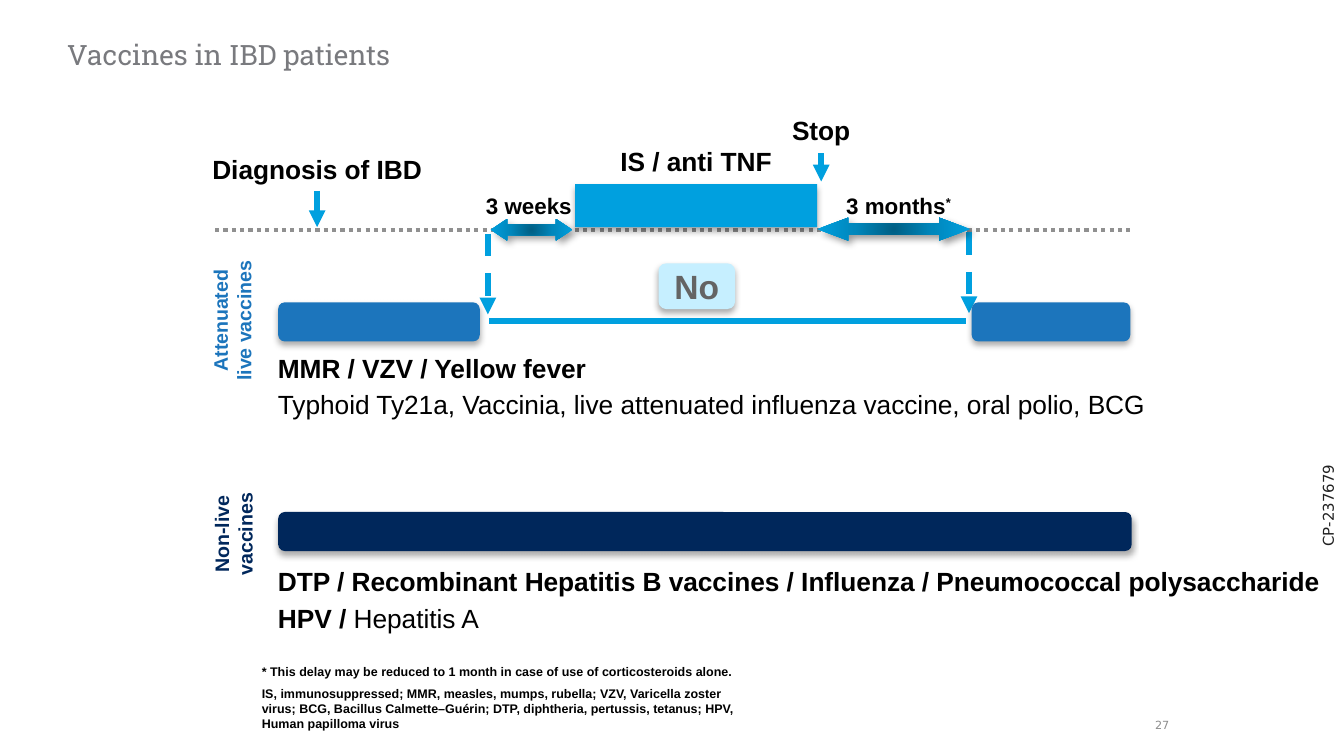
from lxml.etree import SubElement
from pptx import Presentation
from pptx.dml.color import RGBColor
from pptx.enum.dml import MSO_LINE_DASH_STYLE as Dash
from pptx.enum.shapes import MSO_CONNECTOR, MSO_SHAPE as Shape
from pptx.enum.text import MSO_ANCHOR as Anchor, MSO_AUTO_SIZE as AutoSize, PP_ALIGN as Align
from pptx.oxml.ns import qn
from pptx.util import Inches, Pt

COLORS = {
    "black": "000000", "axis": "909090", "cyan": "00A0DF", "mid": "0087BC",
    "deep": "005F84", "blue": "1C75BC", "navy": "00275B", "pale": "C6EFFF",
    "no": "646464", "title": "797A7E", "number": "8D8D8D", "code": "212121",
}
SOFT = {"blurRad": 3.5, "dist": 2.2, "angle": 90, "alpha": 32}
STRONG = {"blurRad": 4, "dist": 3, "angle": 45, "alpha": 40}


def rgb(name):
    """Return the named colour."""
    return RGBColor.from_string(COLORS[name])


def add_runs(p, runs, size, color, font):
    """Add (text, format) runs to a paragraph, splitting lines at breaks."""
    for text, extra in runs:
        for i, line in enumerate(text.split("\n")):
            if i:
                p.add_line_break()
            r = p.add_run()
            r.text = line
            values = {"size": Pt(size), "name": font, "bold": extra.get("bold", True)}
            for key, value in values.items():
                setattr(r.font, key, value)
            r.font.color.rgb = rgb(color)
            if extra.get("superscript"):
                r._r.get_or_add_rPr().set("baseline", "30000")


def fill_text(tf, paragraphs, size, color="black", font="Arial", align=Align.CENTER,
              gap=0, wrap=False, anchor=Anchor.TOP, inset=(0.1, 0.05)):
    """Format a text frame and write its paragraphs."""
    side, end = map(Inches, inset)
    values = {"word_wrap": wrap, "auto_size": AutoSize.NONE, "vertical_anchor": anchor,
              "margin_left": side, "margin_right": side, "margin_top": end, "margin_bottom": end}
    for key, value in values.items():
        setattr(tf, key, value)
    for i, runs in enumerate(paragraphs):
        p = tf.add_paragraph() if i else tf.paragraphs[0]
        p.alignment = align
        if i:
            p.space_before = Pt(gap)
        add_runs(p, runs, size, color, font)


def add_text(s, box, paragraphs, size, rotation=0, **formats):
    """Add a text box."""
    sp = s.shapes.add_textbox(*map(Inches, box))
    sp.rotation = rotation
    fill_text(sp.text_frame, paragraphs, size, **formats)


def add_shadow(sp, shadow):
    """Give a shape an outer shadow."""
    sp.shadow.inherit = False
    effects = sp._element.spPr.find(qn("a:effectLst"))
    outer = SubElement(effects, qn("a:outerShdw"), rotWithShape="0",
                       blurRad=str(Pt(shadow["blurRad"])), dist=str(Pt(shadow["dist"])),
                       dir=str(shadow["angle"] * 60000))
    clr = SubElement(outer, qn("a:srgbClr"), val=COLORS["black"])
    SubElement(clr, qn("a:alpha"), val=str(shadow["alpha"] * 1000))


def add_block(s, kind, box, color):
    """Add a filled block with a soft shadow."""
    sp = s.shapes.add_shape(kind, *map(Inches, box))
    sp.fill.solid()
    sp.fill.fore_color.rgb = rgb(color)
    sp.line.fill.background()
    add_shadow(sp, SOFT)
    return sp


def add_delay_arrow(s, box, head):
    """Add a double arrow with a radial gradient, dark in the centre."""
    sp = s.shapes.add_shape(Shape.LEFT_RIGHT_ARROW, *map(Inches, box))
    sp.adjustments[1] = head
    sp.line.fill.background()
    spPr = sp._element.spPr
    grad = SubElement(spPr, qn("a:gradFill"), rotWithShape="1")
    stops = SubElement(grad, qn("a:gsLst"))
    for pos, color in ((0, "deep"), (50, "mid"), (100, "cyan")):
        gs = SubElement(stops, qn("a:gs"), pos=str(pos * 1000))
        SubElement(gs, qn("a:srgbClr"), val=COLORS[color])
    radial = SubElement(grad, qn("a:path"), path="circle")
    SubElement(radial, qn("a:fillToRect"), dict.fromkeys("ltrb", "50000"))
    spPr.find(qn("a:prstGeom")).addnext(grad)
    add_shadow(sp, STRONG)


def add_line(s, start, end, color="cyan", width=3, dash=None, arrow=False):
    """Add a straight line, with an arrowhead at its end on request."""
    ln = s.shapes.add_connector(MSO_CONNECTOR.STRAIGHT, *map(Inches, start + end))
    ln.line.color.rgb = rgb(color)
    ln.line.width = Pt(width)
    if dash:
        ln.line.dash_style = dash
    if arrow:
        SubElement(ln.line._get_or_add_ln(), qn("a:tailEnd"), type="triangle")
    SubElement(ln._element.spPr, qn("a:effectLst"))


def add_title(s, text):
    """Place and format the title placeholder."""
    title = s.shapes.title
    box = {"left": 0.5, "top": 0.31, "width": 8.32, "height": 0.23}
    for key, value in box.items():
        setattr(title, key, Inches(value))
    fill_text(title.text_frame, [[(text, {"bold": False})]], 15, color="title",
              font="Roboto Slab", align=Align.LEFT, wrap=True, inset=(0, 0))
    title.text_frame.paragraphs[0].line_spacing = 0.9


def add_timeline(s):
    """Draw the treatment timeline with its labels and delays."""
    add_line(s, (1.6, 1.71), (8.43, 1.71), "axis", 2.25, Dash.ROUND_DOT)
    for text, box, size in (
        ("Diagnosis of IBD", (1.47, 1.09, 1.78, 0.34), 14.1),
        ("IS / anti TNF", (4.51, 1.03, 1.34, 0.34), 14.1),
        ("Stop", (5.79, 0.8, 0.64, 0.34), 14.1),
        ("3 weeks", (3.51, 1.38, 0.85, 0.3), 12),
    ):
        add_text(s, box, [[(text, {})]], size)
    add_text(s, (6.19, 1.38, 0.99, 0.3),
             [[("3 months", {}), ("*", {"superscript": True})]], 12)
    for x, top, bottom, dash in ((7.21, 1.73, 2.33, Dash.DASH), (3.63, 1.74, 2.34, Dash.DASH),
                                 (6.11, 1.14, 1.35, None), (2.36, 1.42, 1.69, None)):
        add_line(s, (x, top), (x, bottom), dash=dash, arrow=True)
    add_block(s, Shape.RECTANGLE, (4.28, 1.37, 1.8, 0.32), "cyan")
    add_delay_arrow(s, (6.08, 1.62, 1.14, 0.17), 1.36)
    add_delay_arrow(s, (3.65, 1.63, 0.61, 0.16), 0.77)


def add_vaccines(s):
    """Draw the vaccine bars, their side labels and their lists."""
    add_line(s, (3.64, 2.39), (7.19, 2.39))
    no = add_block(s, Shape.ROUNDED_RECTANGLE, (4.9, 1.96, 0.57, 0.34), "pale")
    fill_text(no.text_frame, [[("No", {})]], 18, color="no", anchor=Anchor.MIDDLE, inset=(0.1, 0))
    for left, top, width, color in ((2.07, 2.25, 1.5, "blue"), (7.23, 2.25, 1.18, "blue"),
                                    (2.07, 3.81, 6.35, "navy")):
        add_block(s, Shape.ROUNDED_RECTANGLE, (left, top, width, 0.29), color)
    for text, box, color in (
        ("Attenuated\nlive vaccines", (1.17, 2.16, 1.11, 0.45), "blue"),
        ("Non-live\nvaccines", (1.32, 3.75, 0.83, 0.45), "navy"),
    ):
        add_text(s, box, [[(text, {})]], 10.5, rotation=270, color=color)
    plain = {"bold": False}
    live = [[("MMR / VZV / Yellow fever", {})],
            [("Typhoid Ty21a, Vaccinia, live attenuated influenza vaccine, oral polio, BCG", plain)]]
    non_live = [[("DTP / Recombinant Hepatitis B vaccines / Influenza / "
                  "Pneumococcal polysaccharide", {})],
                [("HPV / ", {}), ("Hepatitis A", plain)]]
    for box, lines in (((1.97, 2.57, 6.74, 0.6), live), ((1.97, 4.16, 8.06, 0.6), non_live)):
        add_text(s, box, lines, 14.1, align=Align.LEFT, gap=2.5)


def add_notes_and_codes(s):
    """Add the footnotes, the page number and the side code."""
    notes = [
        "* This delay may be reduced to 1 month in case of use of corticosteroids alone.",
        "IS, immunosuppressed; MMR, measles, mumps, rubella; VZV, Varicella zoster virus; "
        "BCG, Bacillus Calmette–Guérin; DTP, diphtheria, pertussis, tetanus; "
        "HPV, Human papilloma virus",
    ]
    add_text(s, (1.85, 4.89, 3.87, 0.61), [[(note, {})] for note in notes], 6.7,
             align=Align.LEFT, gap=4, wrap=True)
    add_text(s, (8.51, 5.3, 0.19, 0.19), [[("27", {"bold": False})]], 6, color="number",
             font="DejaVu Sans", align=Align.RIGHT, anchor=Anchor.MIDDLE, inset=(0, 0))
    add_text(s, (9.44, 3.6, 0.89, 0.24), [[("CP-237679", {"bold": False})]], 8, rotation=270,
             color="code", font="DejaVu Sans", align=Align.LEFT, wrap=True)


def main():
    """Build the slide and save it."""
    prs = Presentation()
    prs.slide_width = Inches(10)
    prs.slide_height = prs.slide_width * 9 // 16
    s = prs.slides.add_slide(prs.slide_layouts[5])
    add_title(s, "Vaccines in IBD patients")
    add_timeline(s)
    add_vaccines(s)
    add_notes_and_codes(s)
    prs.save("out.pptx")


if __name__ == "__main__":
    main()
